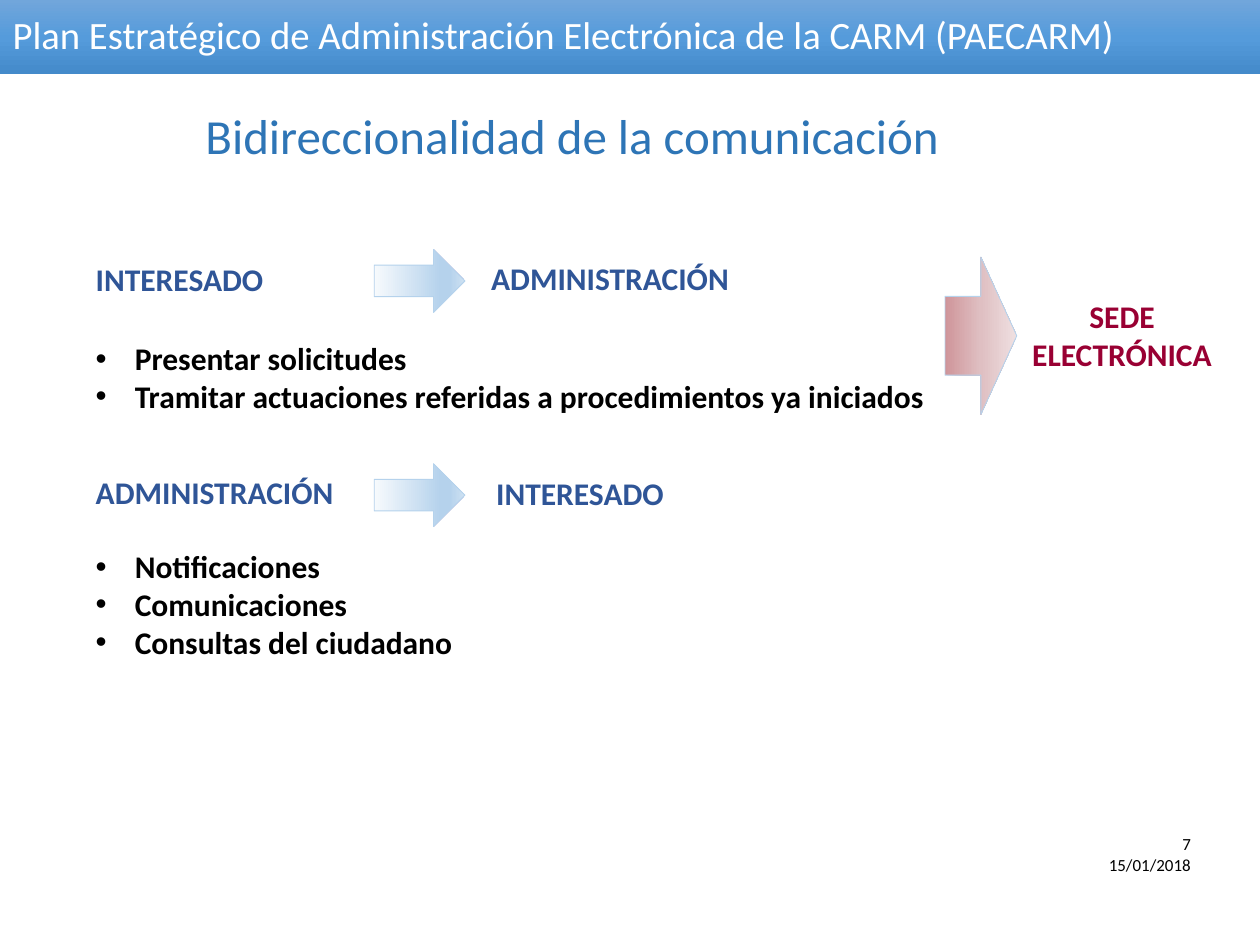
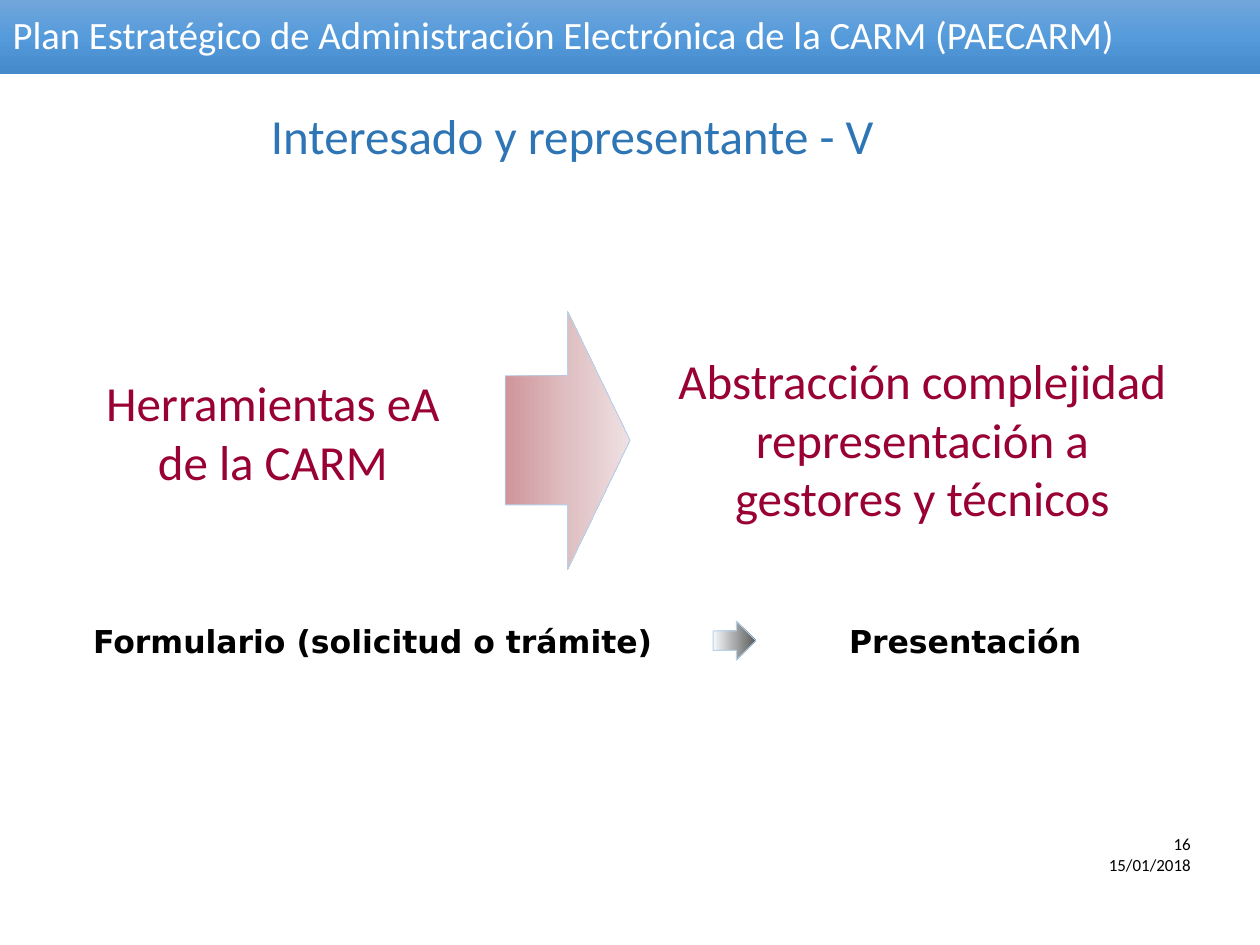
"""Build two slides on two-way communication and on interested parties."""
from lxml import etree
from pptx import Presentation
from pptx.dml.color import RGBColor
from pptx.enum.shapes import MSO_SHAPE
from pptx.enum.text import MSO_ANCHOR, MSO_AUTO_SIZE, PP_ALIGN
from pptx.oxml.ns import qn
from pptx.util import Inches, Pt

LEFT, CENTER, RIGHT = PP_ALIGN.LEFT, PP_ALIGN.CENTER, PP_ALIGN.RIGHT
MIDDLE, TOP = MSO_ANCHOR.MIDDLE, MSO_ANCHOR.TOP
NO_AUTOFIT = MSO_AUTO_SIZE.NONE
RIGHT_ARROW = MSO_SHAPE.RIGHT_ARROW
TITLE_AND_CONTENT, TITLE_ONLY = 1, 5

BLACK, WHITE, HEADING_BLUE, ROUTE_BLUE, CRIMSON, OUTLINE = (
    "000000", "FFFFFF", "2E75B6", "2F5597", "990033", "B5D2EC")
BAND_GRADIENT = [(0, "71A6DB"), (50, "559BDB"), (100, "448ACA")]
BLUE_GRADIENT = [(0, "F7FAFD"), (74, "B5D2EC"), (83, "B5D2EC"), (100, "CEE1F2")]
RED_GRADIENT = [(0, "CF959A"), (50, "DFBFC2"), (100, "EFE0E1")]
GREY_GRADIENT = [(0, "F7FAFD"), (100, "595959")]

BAND_TITLE = "Plan Estratégico de Administración Electrónica de la CARM (PAECARM)"
DATE = "15/01/2018"
ROUTES = [
    {"from": "INTERESADO", "to": "ADMINISTRACIÓN", "gap_above": 0, "gap_below": 24,
     "arrow_top": 1.98, "to_left": 3.8,
     "items": ["Presentar solicitudes",
               "Tramitar actuaciones referidas a procedimientos ya iniciados"]},
    {"from": "ADMINISTRACIÓN", "to": "INTERESADO", "gap_above": 33, "gap_below": 21,
     "arrow_top": 3.68, "to_left": 3.84,
     "items": ["Notificaciones", "Comunicaciones", "Consultas del ciudadano"]},
]
CRIMSON_TEXTS = [
    ("Herramientas eA de la CARM", (0.71, 2.91, 2.91, 1.18)),
    ("Abstracción complejidad representación a gestores y técnicos",
     (5.25, 2.73, 4.14, 2.42)),
]
STEPS = [
    ("Formulario (solicitud o trámite)", (0.64, 4.89, 4.8, 0.39)),
    ("Presentación", (6.64, 4.89, 2.2, 0.39)),
]


def color(value):
    return RGBColor.from_string(value)


def place(shape, box):
    shape.left, shape.top, shape.width, shape.height = map(Inches, box)


def fill_gradient(shape, stops, angle):
    shape.fill.gradient()
    shape.fill.gradient_angle = angle
    stop_list = shape.element.spPr.find(qn("a:gradFill")).find(qn("a:gsLst"))
    for stop in list(stop_list):
        stop_list.remove(stop)
    for position, value in stops:
        stop = etree.SubElement(stop_list, qn("a:gs"), pos=str(position * 1000))
        etree.SubElement(stop, qn("a:srgbClr"), val=value)


def style(paragraph, size, value, bold=False, align=LEFT, font="Calibri"):
    paragraph.alignment = align
    paragraph.font.name = font
    paragraph.font.size = Pt(size)
    paragraph.font.bold = bold
    paragraph.font.color.rgb = color(value)


def add_text(slide, box, lines, *style_values, **style_options):
    shape = slide.shapes.add_textbox(*map(Inches, box))
    frame = shape.text_frame
    frame.word_wrap = True
    frame.text = "\n".join(lines)
    for paragraph in frame.paragraphs:
        style(paragraph, *style_values, **style_options)


def add_arrow(slide, box, stops):
    arrow = slide.shapes.add_shape(RIGHT_ARROW, *map(Inches, box))
    arrow.shadow.inherit = False
    fill_gradient(arrow, stops, 0)
    arrow.line.color.rgb = color(OUTLINE)
    arrow.line.width = Pt(0.5)


def add_slide(presentation, layout, heading, number):
    slide = presentation.slides.add_slide(presentation.slide_layouts[layout])
    band = slide.shapes.title
    place(band, (0, 0, 10, 0.59))
    fill_gradient(band, BAND_GRADIENT, 270)
    frame = band.text_frame
    frame.text = BAND_TITLE
    frame.auto_size = NO_AUTOFIT
    frame.vertical_anchor = MIDDLE
    frame.paragraphs[0].line_spacing = 0.9
    style(frame.paragraphs[0], 22.1, WHITE)
    add_text(slide, (1.05, 0.79, 6.98, 0.63), [heading], 28, HEADING_BLUE, align=CENTER)
    add_text(slide, (7.78, 6.57, 1.77, 0.43), [str(number), DATE], 9.7, BLACK, align=RIGHT)
    return slide


def set_list_format(paragraph, bullet, space_before):
    paragraph.space_before = Pt(space_before)
    properties = paragraph._p.get_or_add_pPr()
    hanging = Inches(0.31) if bullet else 0
    properties.set("marL", str(hanging))
    properties.set("indent", str(-hanging))
    if bullet:
        etree.SubElement(properties, qn("a:buChar"), char="•")
    else:
        etree.SubElement(properties, qn("a:buNone"))


def fill_routes(body):
    place(body, (0.66, 2.01, 7.37, 3.6))
    frame = body.text_frame
    frame.auto_size = NO_AUTOFIT
    frame.vertical_anchor = TOP
    lines = []
    for route in ROUTES:
        lines.append((route["from"], False, route["gap_above"]))
        for index, item in enumerate(route["items"]):
            lines.append((item, True, 0 if index else route["gap_below"]))
    frame.text = "\n".join(text for text, _, _ in lines)
    for paragraph, (_, bullet, gap) in zip(frame.paragraphs, lines):
        set_list_format(paragraph, bullet, gap)
        style(paragraph, 18, BLACK if bullet else ROUTE_BLUE, bold=True)


def build_communication(presentation):
    slide = add_slide(presentation, TITLE_AND_CONTENT,
                      "Bidireccionalidad de la comunicación", 7)
    fill_routes(slide.placeholders[1])
    for route in ROUTES:
        arrow_top = route["arrow_top"]
        add_arrow(slide, (2.97, arrow_top, 0.72, 0.5), BLUE_GRADIENT)
        add_text(slide, (route["to_left"], arrow_top + 0.03, 2.3, 0.4), [route["to"]],
                 18, ROUTE_BLUE, bold=True)
    add_arrow(slide, (7.5, 2.04, 0.57, 1.25), RED_GRADIENT)
    add_text(slide, (8.07, 2.31, 1.67, 0.71), ["SEDE ELECTRÓNICA"], 18, CRIMSON,
             bold=True, align=CENTER)


def build_representation(presentation):
    slide = add_slide(presentation, TITLE_ONLY, "Interesado y representante - V", 16)
    for text, box in CRIMSON_TEXTS:
        add_text(slide, box, [text], 28, CRIMSON, align=CENTER)
    for text, box in STEPS:
        add_text(slide, box, [text], 18, BLACK, bold=True, font="DejaVu Sans")
    add_arrow(slide, (4.01, 2.47, 0.99, 2.05), RED_GRADIENT)
    add_arrow(slide, (5.66, 4.93, 0.34, 0.31), GREY_GRADIENT)


def main():
    presentation = Presentation()
    presentation.slide_width, presentation.slide_height = Inches(10), Inches(7.5)
    build_communication(presentation)
    build_representation(presentation)
    presentation.save("out.pptx")


if __name__ == "__main__":
    main()
